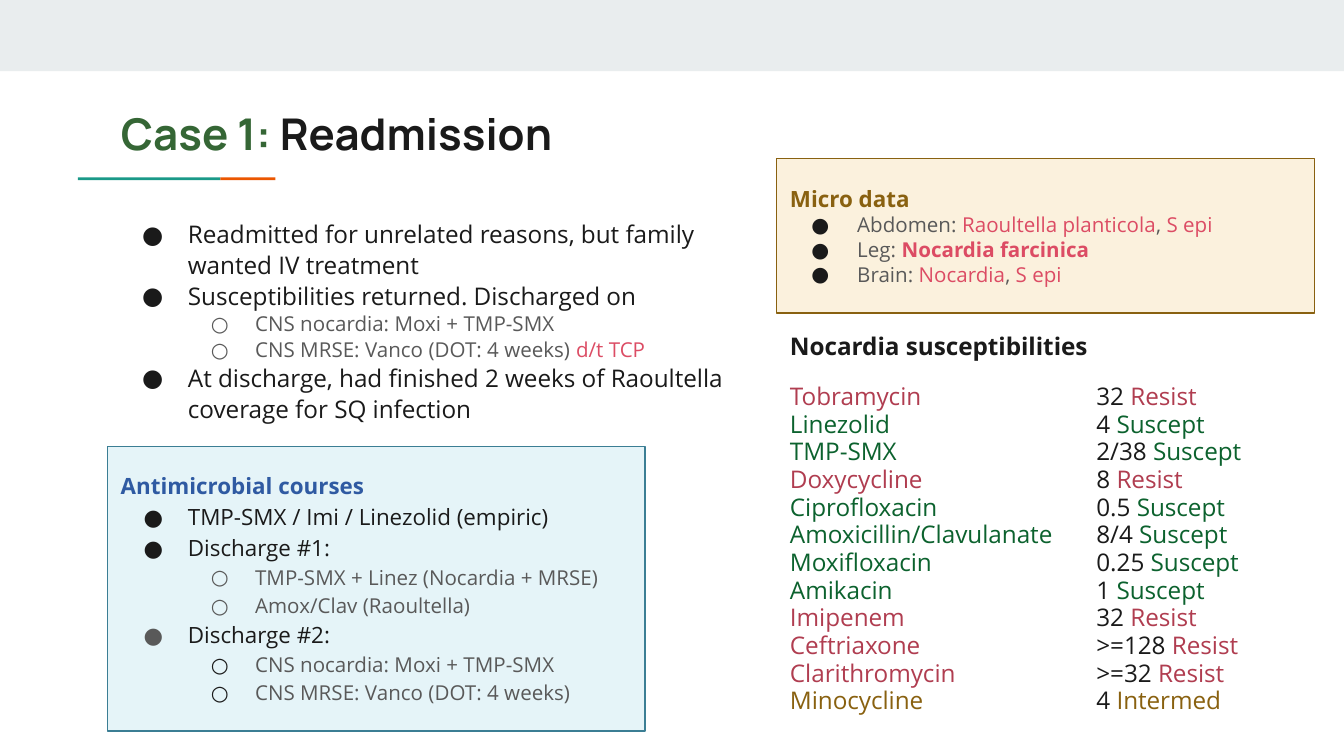
from dataclasses import dataclass
from typing import Optional

from lxml.etree import SubElement
from pptx import Presentation
from pptx.dml.color import RGBColor as RGB
from pptx.enum.shapes import MSO_SHAPE as Shape
from pptx.enum.text import MSO_ANCHOR as Anchor, MSO_AUTO_SIZE as AutoSize, PP_ALIGN as Align
from pptx.oxml.ns import qn
from pptx.util import Inches, Pt

INK = RGB(0x1A, 0x1A, 0x1A)
GRAY = RGB(0x59, 0x59, 0x59)
WHITE = RGB(0xFF, 0xFF, 0xFF)
BAND = RGB(0xE9, 0xED, 0xEE)
TEAL = RGB(0x1A, 0x99, 0x88)
ORANGE = RGB(0xEB, 0x56, 0x00)
TITLE_GREEN = RGB(0x35, 0x66, 0x35)
PINK = RGB(0xDC, 0x4C, 0x64)
BLUE = RGB(0x2F, 0x5A, 0xA2)
BLUE_FILL = RGB(0xE5, 0xF4, 0xF8)
BLUE_EDGE = RGB(0x3B, 0x7E, 0x94)
AMBER = RGB(0x89, 0x61, 0x10)
AMBER_FILL = RGB(0xFB, 0xF1, 0xDD)
RED = RGB(0xB0, 0x3D, 0x50)
GREEN = RGB(0x0C, 0x62, 0x2E)

COLUMNS = 100
ROWS = COLUMNS * 9 / 16
CELL = Inches(0.1)
VALUE_TAB = 2.28
BODY_FONT = "Open Sans"


@dataclass
class Line:
    runs: list
    size: float
    level: Optional[int] = None
    indent: float = 0.34
    dot: RGB = INK
    spacing: float = 1.0
    before: float = 0
    tab: float = 0


def write(paragraph, text, *, size, color=INK, bold=False, font=BODY_FONT):
    run = paragraph.add_run()
    run.text = text
    run.font.name = font
    run.font.size = Pt(size)
    run.font.bold = bold
    run.font.color.rgb = color


def add_bullet(paragraph, line):
    props = paragraph._p.get_or_add_pPr()
    props.set("marL", str(Inches(0.5 * (line.level + 1))))
    props.set("indent", str(-Inches(line.indent)))
    color = SubElement(props, qn("a:buClr"))
    SubElement(color, qn("a:srgbClr"), val=str(line.dot))
    SubElement(props, qn("a:buFont"), typeface=BODY_FONT)
    SubElement(props, qn("a:buChar"), char="●○"[line.level])
    paragraph.level = line.level


def add_tab(paragraph, position):
    stops = SubElement(paragraph._p.get_or_add_pPr(), qn("a:tabLst"))
    SubElement(stops, qn("a:tab"), pos=str(Inches(position)), algn="l")


class CaseSlide:
    def __init__(self, deck):
        self.slide = deck.slides.add_slide(deck.slide_layouts[5])
        self.slide.background.fill.solid()
        self.slide.background.fill.fore_color.rgb = WHITE

    def grid(self, *cells):
        return [round(cell * CELL) for cell in cells]

    def frame(self, shape, anchor=Anchor.TOP):
        frame = shape.text_frame
        frame.word_wrap = True
        frame.auto_size = AutoSize.NONE
        frame.vertical_anchor = anchor
        frame.margin_left = frame.margin_right = CELL
        frame.margin_top = frame.margin_bottom = CELL
        return frame

    def fill(self, frame, lines):
        for index, line in enumerate(lines):
            paragraph = frame.add_paragraph() if index else frame.paragraphs[0]
            if line.level is not None:
                add_bullet(paragraph, line)
            if line.tab:
                add_tab(paragraph, line.tab)
            paragraph.alignment = Align.LEFT
            paragraph.line_spacing = line.spacing
            if line.before:
                paragraph.space_before = Pt(line.before)
            for text, color, *bold in line.runs:
                write(paragraph, text, size=line.size, color=color, bold=bool(bold))

    def title(self, cells, parts):
        heading = self.slide.shapes.title
        heading.left, heading.top, heading.width, heading.height = self.grid(*cells)
        paragraph = self.frame(heading).paragraphs[0]
        paragraph.alignment = Align.LEFT
        for text, color in parts:
            write(paragraph, text, size=23.4, color=color, bold=True, font="Manrope")

    def block(self, cells, color, edge=None):
        block = self.slide.shapes.add_shape(Shape.RECTANGLE, *self.grid(*cells))
        block.shadow.inherit = False
        block.fill.solid()
        block.fill.fore_color.rgb = color
        if edge is None:
            block.line.fill.background()
        else:
            block.line.color.rgb = edge
            block.line.width = Pt(0.75)
        return block

    def panel(self, cells, color, edge, lines):
        self.fill(self.frame(self.block(cells, color, edge), Anchor.MIDDLE), lines)

    def text(self, cells, lines):
        self.fill(self.frame(self.slide.shapes.add_textbox(*self.grid(*cells))), lines)


def point(*runs, **options):
    return Line(list(runs), **{"size": 13, "level": 0, "spacing": 1.05, **options})


def detail(*runs, **options):
    return point(*runs, **{"size": 11, "level": 1, "indent": 0.33, "dot": GRAY, **options})


def course(text, **options):
    return point((text, INK), size=12, indent=0.33, spacing=1.15, **options)


def drug(text, **options):
    return detail((text, GRAY), spacing=1.15, **options)


def culture(site, *growth):
    return point((site, GRAY), *growth, size=11, spacing=1.0)


def main():
    deck = Presentation()
    deck.slide_width, deck.slide_height = round(COLUMNS * CELL), round(ROWS * CELL)
    case = CaseSlide(deck)

    case.block((0, 0, COLUMNS, 5.3), BAND)
    case.block((5.8, 13.2, 10.6, 0.2), TEAL)
    case.block((16.4, 13.2, 4.1, 0.2), ORANGE)
    case.title((8, 6.93, 84.1, 5.9), [("Case 1:", TITLE_GREEN), (" Readmission", INK)])

    case.text((8, 15.24, 47.8, 17.3), [
        point(("Readmitted for unrelated reasons, but family wanted IV treatment", INK)),
        point(("Susceptibilities returned. Discharged on", INK)),
        detail(("CNS nocardia: Moxi + TMP-SMX", GRAY)),
        detail(("CNS MRSE: Vanco (DOT: 4 weeks) ", GRAY), ("d/t TCP", PINK)),
        point(("At discharge, had finished 2 weeks of Raoultella coverage for SQ infection", INK)),
    ])

    case.panel((8, 33.2, 40, 21.2), BLUE_FILL, BLUE_EDGE, [
        Line([("Antimicrobial courses", BLUE, True)], 12),
        course("TMP-SMX / Imi / Linezolid (empiric)"),
        course("Discharge #1:"),
        drug("TMP-SMX + Linez (Nocardia + MRSE)"),
        drug("Amox/Clav (Raoultella)"),
        course("Discharge #2:", dot=GRAY),
        drug("CNS nocardia: Moxi + TMP-SMX", dot=INK),
        drug("CNS MRSE: Vanco (DOT: 4 weeks)", dot=INK),
    ])

    epidermidis = [(", ", GRAY), ("S epi", PINK)]
    case.panel((57.8, 11.8, 40, 11.5), AMBER_FILL, AMBER, [
        Line([("Micro data", AMBER, True)], 12),
        culture("Abdomen: ", ("Raoultella planticola", PINK), *epidermidis),
        culture("Leg: ", ("Nocardia farcinica", PINK, True)),
        culture("Brain: ", ("Nocardia", PINK), *epidermidis),
    ])

    tones = {"Resist": RED, "Suscept": GREEN, "Intermed": AMBER}
    results = [
        ("Tobramycin", "32", "Resist"),
        ("Linezolid", "4", "Suscept"),
        ("TMP-SMX", "2/38", "Suscept"),
        ("Doxycycline", "8", "Resist"),
        ("Ciprofloxacin", "0.5", "Suscept"),
        ("Amoxicillin/Clavulanate", "8/4", "Suscept"),
        ("Moxifloxacin", "0.25", "Suscept"),
        ("Amikacin", "1", "Suscept"),
        ("Imipenem", "32", "Resist"),
        ("Ceftriaxone", ">=128", "Resist"),
        ("Clarithromycin", ">=32", "Resist"),
        ("Minocycline", "4", "Intermed"),
    ]
    case.text((57.8, 23.8, 40, 30.5), [
        Line([("Nocardia susceptibilities", INK, True)], 13, spacing=0.95),
        *(Line([(agent, tones[call]), (f"\t{level} ", INK), (call, tones[call])], 13,
               spacing=0.95, before=0 if row else 12, tab=VALUE_TAB)
          for row, (agent, level, call) in enumerate(results)),
    ])

    deck.save("out.pptx")


if __name__ == "__main__":
    main()
